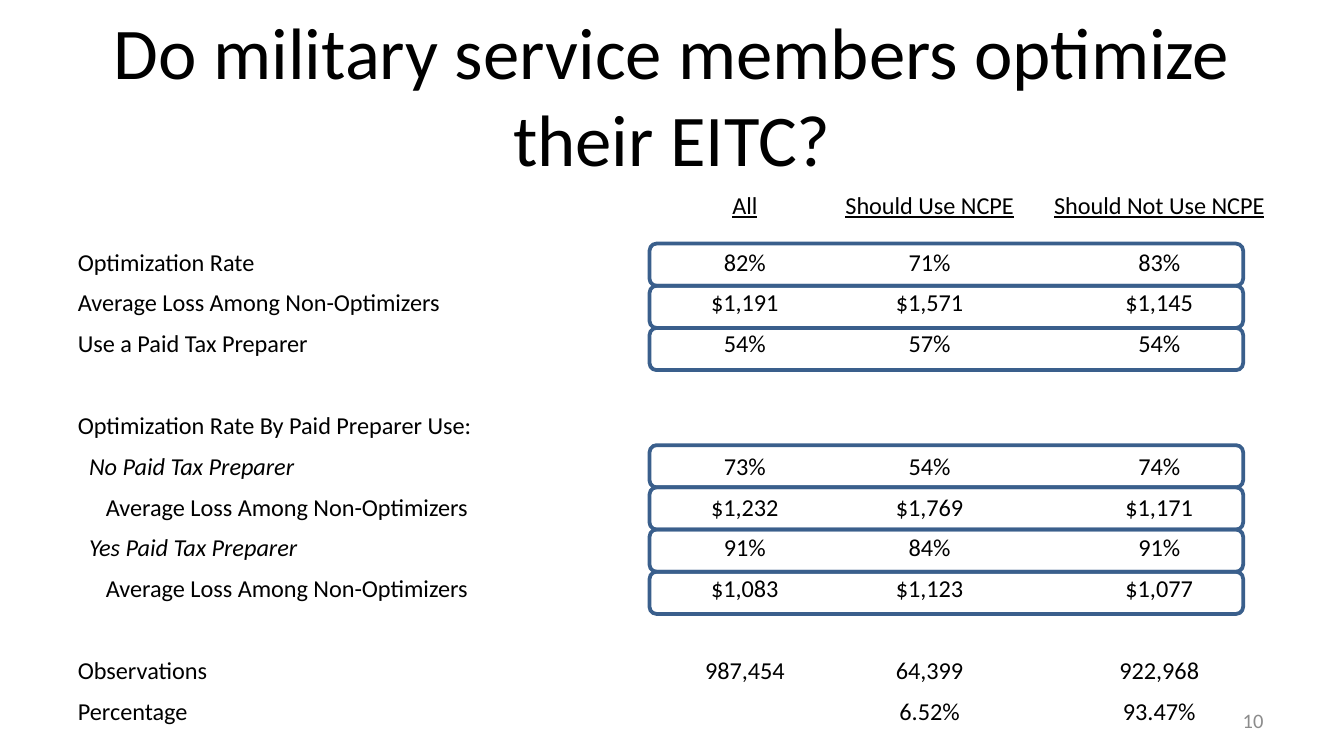
from dataclasses import dataclass

from lxml import etree
from pptx import Presentation
from pptx import util as u
from pptx.dml.color import RGBColor
from pptx.enum import shapes, text
from pptx.oxml import ns

Pt = u.Pt


@dataclass(frozen=True)
class Theme:
    font: str = "Calibri"
    ink: str = "000000"
    muted: str = "8C8C8C"
    outline: str = "3A5F8C"
    title_size: int = 39
    table_size: int = 13
    number_size: int = 11


class PageBuilder:
    """Holds the theme and the current page."""

    def __init__(self, theme, page):
        self.theme = theme
        self.page = page

    def span(self, para, words, size, color, italic=False, underline=False):
        span = para.add_run()
        span.text = words
        font = span.font
        font.name, font.size = self.theme.font, Pt(size)
        font.bold, font.italic, font.underline = False, italic, underline
        font.color.rgb = RGBColor.from_string(color)

    def text_box(self, left, top, width, height, words, size, color, align):
        frame = self.page.shapes.add_textbox(
            Pt(left), Pt(top), Pt(width), Pt(height)).text_frame
        frame.word_wrap = True
        frame.vertical_anchor = text.MSO_ANCHOR.MIDDLE
        para = frame.paragraphs[0]
        para.alignment = align
        self.span(para, words, size, color)

    def cell(self, cell, words, anchor, align, indent=0, **style):
        cell.fill.background()
        cell.vertical_anchor = anchor
        cell.margin_left, cell.margin_right = Pt(5.75 + indent), Pt(5.75)
        cell.margin_top = cell.margin_bottom = 0
        para = cell.text_frame.paragraphs[0]
        para.alignment = align
        if words:
            self.span(para, words, self.theme.table_size, self.theme.ink, **style)
        else:
            # An empty cell keeps the row height only at the table's type size
            end = etree.SubElement(para._p, ns.qn("a:endParaRPr"))
            end.set("sz", str(self.theme.table_size * 100))

    def table(self, left, top, widths, header_height, row_height, headers, rows):
        heights = [header_height] + [row_height] * len(rows)
        table = self.page.shapes.add_table(
            len(heights), len(widths), Pt(left), Pt(top),
            Pt(sum(widths)), Pt(sum(heights))).table
        table.horz_banding = False
        for column, width in zip(table.columns, widths):
            column.width = Pt(width)
        for row, height in zip(table.rows, heights):
            row.height = Pt(height)

        center = text.PP_ALIGN.CENTER
        for column, words in enumerate(headers):
            self.cell(table.cell(0, column), words, text.MSO_ANCHOR.MIDDLE,
                      center, underline=True)
        bottom = text.MSO_ANCHOR.BOTTOM
        for index, (label, indent, italic, values) in enumerate(rows, start=1):
            self.cell(table.cell(index, 0), label, bottom, text.PP_ALIGN.LEFT,
                      indent, italic=italic)
            for column, value in enumerate(values, start=1):
                self.cell(table.cell(index, column), value, bottom, center)
        return table

    def outline_box(self, left, top, width, height):
        box = self.page.shapes.add_shape(
            shapes.MSO_SHAPE.ROUNDED_RECTANGLE,
            Pt(left), Pt(top), Pt(width), Pt(height))
        box.shadow.inherit = False
        box.fill.background()
        box.line.color.rgb = RGBColor.from_string(self.theme.outline)
        box.line.width = Pt(2)


HEADERS = ("", "All", "Should Use NCPE", "Should Not Use NCPE")
BLANK = ("", "", "")
LOSS = "Average Loss Among Non-Optimizers"
# Label, indent, italic, values
ROWS = [
    ("Optimization Rate", 0, False, ("82%", "71%", "83%")),
    (LOSS, 0, False, ("$1,191", "$1,571", "$1,145")),
    ("Use a Paid Tax Preparer", 0, False, ("54%", "57%", "54%")),
    ("", 0, False, BLANK),
    ("Optimization Rate By Paid Preparer Use:", 0, False, BLANK),
    ("No Paid Tax Preparer", 6, True, ("73%", "54%", "74%")),
    (LOSS, 15, False, ("$1,232", "$1,769", "$1,171")),
    ("Yes Paid Tax Preparer", 6, True, ("91%", "84%", "91%")),
    (LOSS, 15, False, ("$1,083", "$1,123", "$1,077")),
    ("", 0, False, BLANK),
    ("Observations", 0, False, ("987,454", "64,399", "922,968")),
    ("Percentage", 0, False, ("", "6.52%", "93.47%")),
]


def main():
    deck = Presentation()
    deck.slide_width, deck.slide_height = Pt(720), Pt(405)
    theme = Theme()
    builder = PageBuilder(theme, deck.slides.add_slide(deck.slide_layouts[6]))

    # Title
    builder.text_box(36, 16.5, 648, 67.5,
                     "Do military service members optimize their EITC?",
                     theme.title_size, theme.ink, text.PP_ALIGN.CENTER)

    # Results table; the section break and heading span two columns
    table = builder.table(36, 94.4, (324, 78, 120, 126), 32.4, 21.9, HEADERS, ROWS)
    for row in (4, 5):
        table.cell(row, 0).merge(table.cell(row, 1))

    # Page number
    builder.text_box(516, 375, 168, 21.5, "10",
                     theme.number_size, theme.muted, text.PP_ALIGN.RIGHT)

    # Outlines around the two groups of results
    box_height = 22.6
    for group_top, count in ((130.5, 3), (238.5, 4)):
        for index in range(count):
            builder.outline_box(348, group_top + index * box_height, 318, box_height)

    deck.save("out.pptx")


if __name__ == "__main__":
    main()
